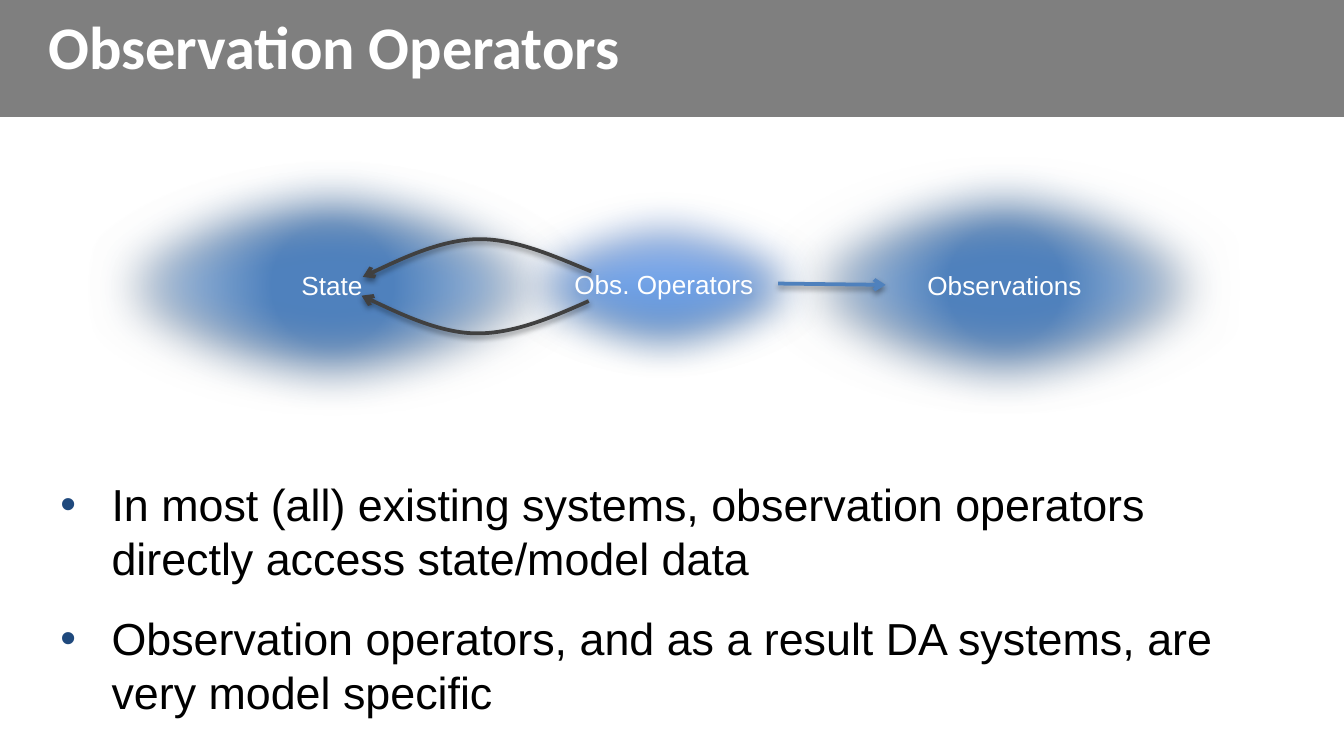
from dataclasses import dataclass

from lxml import etree
from pptx import Presentation
from pptx import util as u
from pptx.dml.color import RGBColor
from pptx.enum import shapes, text
from pptx.oxml import parse_xml
from pptx.oxml.ns import nsdecls, qn


@dataclass(frozen=True)
class Theme:
    heading_font: str = "Calibri"
    body_font: str = "Arial"
    title_size: float = 32.4
    body_size: float = 24
    label_size: float = 14
    line_width: float = 2
    black: str = "000000"
    white: str = "FFFFFF"
    bullet: str = "1F497D"
    blue: str = "4F81BD"
    operator_dark: str = "3F80CE"
    operator_light: str = "A4C4FF"
    curve: str = "404040"


THEME = Theme()
RADIAL = ('<a:path path="circle"><a:fillToRect l="50000" t="50000" '
          'r="50000" b="50000"/></a:path>')
UPWARD = '<a:lin ang="16200000" scaled="0"/>'


def drawing(tag, inner="", attributes=""):
    return parse_xml(f'<a:{tag} {nsdecls("a")} {attributes}>{inner}</a:{tag}>')


def style_font(font, name, size, color, bold=False):
    values = {"name": name, "size": u.Pt(size), "bold": bold}
    for key, value in values.items():
        setattr(font, key, value)
    font.color.rgb = RGBColor.from_string(color)


def place(shape, box):
    for side, length in zip(("left", "top", "width", "height"), box):
        setattr(shape, side, u.Inches(length))


def add_effects(shape, opacity, distance, soft_edge=0):
    """Give a soft shadow below the shape, and blurred edges if asked."""
    inner = (f'<a:outerShdw blurRad="{u.Pt(3.1)}" dist="{u.Pt(distance)}" '
             f'dir="5400000" rotWithShape="0"><a:srgbClr val="{THEME.black}">'
             f'<a:alpha val="{opacity * 1000}"/></a:srgbClr></a:outerShdw>')
    if soft_edge:
        inner += f'<a:softEdge rad="{u.Inches(soft_edge)}"/>'
    properties = shape._element.spPr
    for old in properties.findall(qn("a:effectLst")):
        properties.remove(old)
    properties.append(drawing("effectLst", inner))


def add_header(slide, box):
    left, top, width, height = box
    band = slide.shapes.add_shape(
        shapes.MSO_SHAPE.RECTANGLE, *(u.Inches(length) for length in box))
    band.fill.solid()
    band.fill.fore_color.rgb = RGBColor.from_string(THEME.black)
    band._element.spPr.find(".//" + qn("a:srgbClr")).append(
        drawing("alpha", attributes='val="50000"'))
    band.line.fill.background()
    band.shadow.inherit = False

    title = slide.shapes.title
    band._element.addnext(title._element)
    place(title, (left + 0.26, top, width - 0.76, height - 0.2))
    frame = title.text_frame
    frame.text = "Observation Operators"
    frame.auto_size = text.MSO_AUTO_SIZE.NONE
    frame.vertical_anchor = text.MSO_ANCHOR.MIDDLE
    paragraph = frame.paragraphs[0]
    paragraph.alignment = text.PP_ALIGN.LEFT
    style_font(paragraph.runs[0].font, THEME.heading_font, THEME.title_size,
               THEME.white, bold=True)


def add_cloud(group, box, label, stops, direction, soft_edge):
    """Draw a blurred ellipse with a gradient and a centred label."""
    cloud = group.shapes.add_shape(
        shapes.MSO_SHAPE.OVAL, *(u.Inches(length) for length in box))
    colors = "".join(
        f'<a:gs pos="{position * 1000}"><a:srgbClr val="{color}"/></a:gs>'
        for position, color in stops)
    cloud.line.fill.background()
    cloud._element.spPr.find(qn("a:prstGeom")).addnext(
        drawing("gradFill", f"<a:gsLst>{colors}</a:gsLst>{direction}",
                'rotWithShape="1"'))
    add_effects(cloud, 35, 1.8, soft_edge)
    frame = cloud.text_frame
    frame.text = label
    frame.vertical_anchor = text.MSO_ANCHOR.MIDDLE
    paragraph = frame.paragraphs[0]
    paragraph.alignment = text.PP_ALIGN.CENTER
    style_font(paragraph.runs[0].font, THEME.body_font, THEME.label_size,
               THEME.white)


def finish_arrow(arrow, color):
    arrow.line.color.rgb = RGBColor.from_string(color)
    arrow.line.width = u.Pt(THEME.line_width)
    arrow.line._get_or_add_ln().append(
        drawing("tailEnd", attributes='type="arrow"'))
    add_effects(arrow, 38, 1.6)


def add_curved_arrow(group, points):
    """Draw a Bezier arrow: a start, then two controls and an end per arc."""
    start, *rest = [(u.Inches(x), u.Inches(y)) for x, y in points]
    builder = group.shapes.build_freeform(*start)
    builder.add_line_segments(rest, close=False)
    arrow = builder.convert_to_shape()
    outline = arrow._element.spPr.find(".//" + qn("a:path"))
    segments = outline.findall(qn("a:lnTo"))
    for first in range(0, len(segments), 3):
        arc = etree.SubElement(outline, qn("a:cubicBezTo"))
        for segment in segments[first:first + 3]:
            arc.append(segment[0])
            outline.remove(segment)
    arrow.fill.background()
    finish_arrow(arrow, THEME.curve)


def add_diagram(slide, box):
    left, top, width, height = box
    group = slide.shapes.add_group_shape()
    fade = [(20, THEME.blue), (100, THEME.white)]
    shade = [(0, THEME.operator_dark), (100, THEME.operator_light)]
    add_cloud(group, (left + width - 3.83, top, 3.83, height),
              "Observations", fade, RADIAL, 0.4)
    add_cloud(group, (left, top, 4.08, height), "State", fade, RADIAL, 0.4)
    add_cloud(group, (left + 3.1, top + 0.24, 2.82, 1.47),
              "Obs. Operators", shade, UPWARD, 0.35)

    upper = [(3.97, 0.88), (3.68, 0.76), (3.39, 0.63), (3.11, 0.64),
             (2.82, 0.65), (2.27, 0.92), (2.27, 0.92)]
    lower = [(3.95, 1.1), (3.66, 1.23), (3.37, 1.35), (3.09, 1.34),
             (2.81, 1.33), (2.26, 1.06), (2.26, 1.06)]
    for curve in (upper, lower):
        add_curved_arrow(group, [(left + x, top + y) for x, y in curve])

    to_observations = group.shapes.add_connector(
        shapes.MSO_CONNECTOR.STRAIGHT,
        u.Inches(left + 5.36), u.Inches(top + 0.97),
        u.Inches(left + 6.16), u.Inches(top + 0.98))
    finish_arrow(to_observations, THEME.blue)


def add_findings(slide, box):
    body = slide.placeholders[1]
    place(body, box)
    frame = body.text_frame
    frame.auto_size = text.MSO_AUTO_SIZE.NONE
    findings = [
        "In most (all) existing systems, observation operators directly "
        "access state/model data",
        "Observation operators, and as a result DA systems, are very model "
        "specific",
    ]
    frame.text = "\n".join(findings)
    indent = u.Inches(0.38)
    for number, paragraph in enumerate(frame.paragraphs):
        paragraph.line_spacing = 1.0
        paragraph.space_before = u.Pt(14 if number else 0)
        properties = paragraph._p.get_or_add_pPr()
        properties.set("marL", str(indent))
        properties.set("indent", str(-indent))
        properties.append(
            drawing("buClr", f'<a:srgbClr val="{THEME.bullet}"/>'))
        properties.append(
            drawing("buFont", attributes=f'typeface="{THEME.body_font}"'))
        properties.append(drawing("buChar", attributes='char="•"'))
        style_font(paragraph.runs[0].font, THEME.body_font, THEME.body_size,
                   THEME.black)


def main():
    deck = Presentation()
    deck.slide_width = u.Inches(10)
    deck.slide_height = deck.slide_width * 9 // 16
    slide = deck.slides.add_slide(deck.slide_layouts[1])
    add_header(slide, (0, 0, 10, 0.87))
    add_findings(slide, (0.35, 3.5, 9.31, 1.92))
    add_diagram(slide, (0.43, 1.14, 8.96, 1.96))
    deck.save("out.pptx")


if __name__ == "__main__":
    main()
